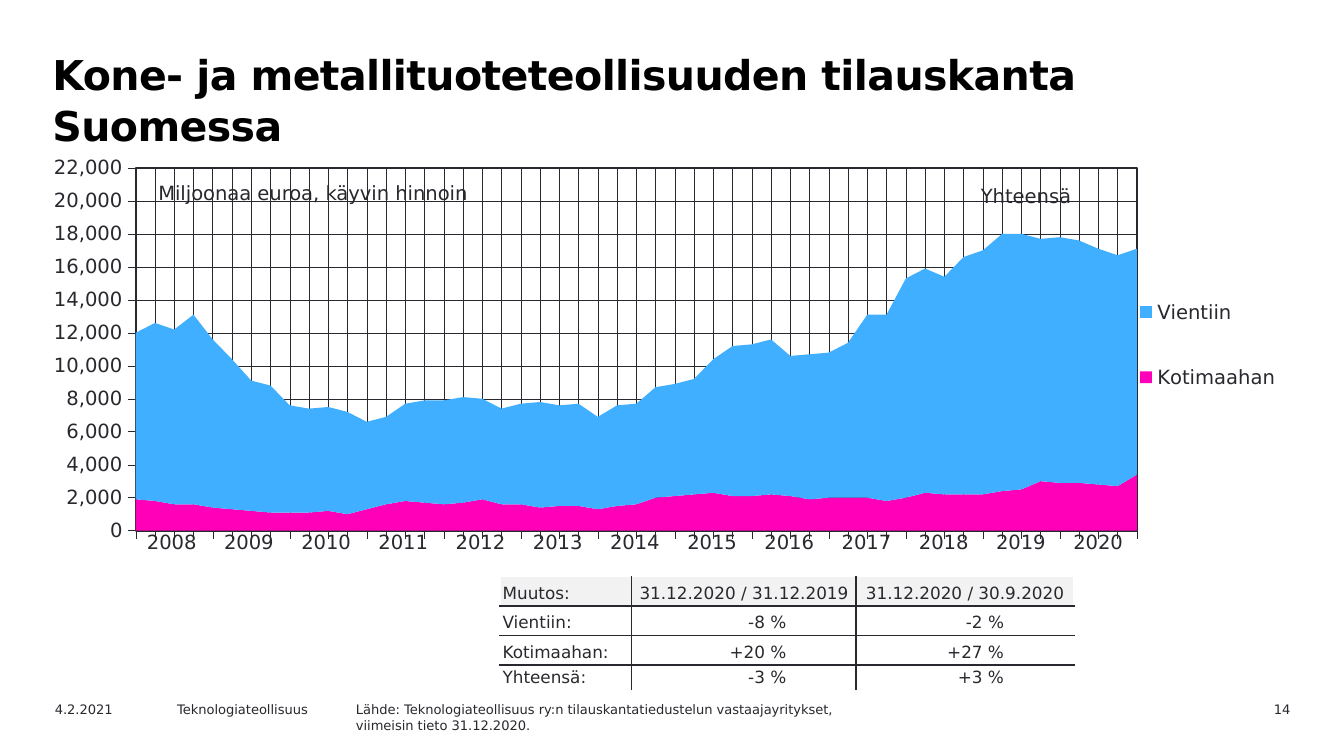
"""Build a slide showing the order book of the Finnish machine and metal products industry."""
import pptx
import pptx.chart.data
import pptx.dml.color
import pptx.enum.chart
import pptx.enum.dml
import pptx.enum.text
import pptx.oxml
import pptx.oxml.ns
import pptx.util

Inches, Pt = pptx.util.Inches, pptx.util.Pt
Align, Anchor = pptx.enum.text.PP_ALIGN, pptx.enum.text.MSO_ANCHOR
Enum = pptx.enum.chart
qn = pptx.oxml.ns.qn

THEME = dict(
    font="DejaVu Sans", ink="29282E", black="000000", white="FFFFFF", head="F2F2F2",
    title=22, label=10.5, cell=9, foot=7,
)
TITLE = "Kone- ja metallituoteteollisuuden tilauskanta Suomessa"
CHART = (0.3, 1.16, 9.4, 3.05)
PLOT = (0.71, 0.09, 7.45, 2.7)
LEGEND = (8.1, 0.76, 1.22, 1.29)
SERIES = [
    ("Kotimaahan ", "FF00B8", [
        1900, 1800, 1600, 1600, 1400, 1300, 1200, 1100, 1100, 1100, 1200, 1000, 1300, 1600,
        1800, 1700, 1600, 1700, 1900, 1600, 1600, 1400, 1500, 1500, 1300, 1500, 1600, 2000,
        2100, 2200, 2300, 2100, 2100, 2200, 2100, 1900, 2000, 2000, 2000, 1800, 2000, 2300,
        2200, 2200, 2200, 2400, 2500, 3000, 2900, 2900, 2800, 2700, 3400]),
    ("Vientiin ", "40AFFF", [
        10100, 10800, 10600, 11500, 10200, 9100, 7900, 7700, 6500, 6300, 6300, 6200, 5300, 5300,
        5900, 6200, 6300, 6400, 6100, 5800, 6100, 6400, 6100, 6200, 5600, 6100, 6100, 6700,
        6800, 7000, 8100, 9100, 9200, 9400, 8500, 8800, 8800, 9400, 11100, 11300, 13300, 13600,
        13200, 14400, 14800, 15600, 15500, 14700, 14900, 14700, 14300, 14000, 13700]),
]
YEARS = [str(year) for year in range(2008, 2021)]
CHANGE = [
    ["Muutos:", "31.12.2020 / 31.12.2019", "31.12.2020 / 30.9.2020"],
    ["Vientiin:", "-8 %", "-2 %"],
    ["Kotimaahan:", "+20 %", "+27 %"],
    ["Yhteensä:", "-3 %", "+3 %"],
]
FOOT = [
    ("14", (8.76, 5.17, 0.94, 0.18), Align.RIGHT),
    ("4.2.2021", (0.31, 5.17, 1, 0.18), Align.LEFT),
    ("Teknologiateollisuus", (1.22, 5.17, 1.42, 0.18), Align.LEFT),
    ("Lähde: Teknologiateollisuus ry:n tilauskantatiedustelun vastaajayritykset,\n"
     "viimeisin tieto 31.12.2020.", (2.55, 5.17, 5, 0.26), Align.LEFT),
]
NOTES = [
    ("Miljoonaa euroa, käyvin hinnoin", (1.08, 1.3, 2.6, 0.27), Align.LEFT),
    ("Yhteensä", (7.2, 1.32, 1.06, 0.27), Align.LEFT),
]


def shade(name):
    return pptx.dml.color.RGBColor.from_string(THEME.get(name, name))


def style(font, size, color="ink", bold=False):
    font.name, font.size, font.bold = THEME["font"], Pt(THEME[size]), bold
    font.color.rgb = shade(color)


def write(frame, text, size, align):
    frame.text = text
    for para in frame.paragraphs:
        para.alignment = align
        for run in para.runs:
            style(run.font, size)


def add_text(slide, text, box, align, size):
    frame = slide.shapes.add_textbox(*map(Inches, box)).text_frame
    frame.word_wrap = True
    write(frame, text, size, align)


def add_title(slide):
    shape = slide.shapes.title
    shape.left, shape.top, shape.width, shape.height = map(Inches, (0.29, 0.31, 8.74, 0.71))
    frame = shape.text_frame
    frame.text = TITLE
    frame.word_wrap, frame.vertical_anchor = True, Anchor.TOP
    frame.auto_size = pptx.enum.text.MSO_AUTO_SIZE.NONE
    para = frame.paragraphs[0]
    para.alignment, para.line_spacing = Align.LEFT, Pt(27)
    para.runs[0].font._element.set("spc", "-30")
    style(para.runs[0].font, "title", "black", True)


def draw_line(line, width, dash=False):
    line.color.rgb, line.width = shade("ink"), Pt(width)
    if dash:
        line.dash_style = pptx.enum.dml.MSO_LINE.ROUND_DOT


def place(parent, box, inner=False):
    for old in parent.findall(qn("c:layout")):
        parent.remove(old)
    target = '<c:layoutTarget val="inner"/>' if inner else ""
    x, y, wide, high = (part / CHART[2 + n % 2] for n, part in enumerate(box))
    layout = pptx.oxml.parse_xml(
        f'<c:layout {pptx.oxml.ns.nsdecls("c")}><c:manualLayout>{target}'
        '<c:xMode val="edge"/><c:yMode val="edge"/>'
        f'<c:x val="{x}"/><c:y val="{y}"/><c:w val="{wide}"/><c:h val="{high}"/>'
        '</c:manualLayout></c:layout>')
    parent.insert(0 if inner else 1, layout)


def add_chart(slide):
    data = pptx.chart.data.CategoryChartData(number_format="#,##0")
    data.categories = [str(n + 1) for n in range(len(SERIES[0][2]))]
    for name, _, vals in SERIES:
        data.add_series(name, vals)
    box = map(Inches, CHART)
    chart = slide.shapes.add_chart(Enum.XL_CHART_TYPE.AREA_STACKED, *box, data).chart
    style(chart.font, "label")
    chart.has_title = False
    chart.has_legend = True
    chart.legend.position = Enum.XL_LEGEND_POSITION.RIGHT
    chart.legend.include_in_layout = False
    style(chart.legend.font, "label")
    place(chart.legend._element, LEGEND)
    plot = chart.plots[0]
    plot.vary_by_categories = False
    for series, (_, color, _) in zip(plot.series, SERIES):
        series.format.fill.solid()
        series.format.fill.fore_color.rgb = shade(color)
        series.format.line.fill.background()
    for axis in (chart.category_axis, chart.value_axis):
        axis.has_major_gridlines = True
        axis.major_tick_mark = Enum.XL_TICK_MARK.OUTSIDE
        axis.minor_tick_mark = Enum.XL_TICK_MARK.NONE
        draw_line(axis.format.line, 0.22)
        draw_line(axis.major_gridlines.format.line, 0.25, True)
    chart.category_axis.tick_label_position = Enum.XL_TICK_LABEL_POSITION.NONE
    value = chart.value_axis
    value.minimum_scale, value.maximum_scale, value.major_unit = 0, 22000, 2000
    value.tick_labels.number_format = "#,##0"
    value.tick_labels.number_format_is_linked = False
    style(value.tick_labels.font, "label")
    value._element.find(qn("c:crossBetween")).set("val", "midCat")
    area = chart._chartSpace.chart.plotArea
    place(area, PLOT, True)
    area.append(pptx.oxml.parse_xml(
        f'<c:spPr {pptx.oxml.ns.nsdecls("c", "a")}><a:noFill/><a:ln w="12700"><a:solidFill>'
        f'<a:srgbClr val="{THEME["ink"]}"/></a:solidFill></a:ln></c:spPr>'))


def edge(cell, sides):
    props = cell._tc.get_or_add_tcPr()
    for side in "LRTB":
        color = sides.get(side)
        fill = (f'<a:solidFill><a:srgbClr val="{THEME[color]}"/></a:solidFill>'
                if color else "<a:noFill/>")
        props.append(pptx.oxml.parse_xml(
            f'<a:ln{side} {pptx.oxml.ns.nsdecls("a")} w="12700">{fill}</a:ln{side}>'))


def add_table(slide, rows, left, top, widths, heights):
    size = map(Inches, (left, top, sum(widths), sum(heights)))
    table = slide.shapes.add_table(len(rows), len(widths), *size).table
    table.first_row = table.horz_banding = False
    for col, wide in zip(table.columns, widths):
        col.width = Inches(wide)
    for row, high in zip(table.rows, heights):
        row.height = Inches(high)
    return table


def add_change(slide):
    table = add_table(slide, CHANGE, 3.72, 4.29, [0.98, 1.67, 1.62], [0.22, 0.22, 0.22, 0.18])
    last = len(CHANGE) - 1
    for i, row in enumerate(CHANGE):
        for j, text in enumerate(row):
            cell = table.cell(i, j)
            edge(cell, dict(L="ink" if j else "white", R="ink" if j < 2 else "white",
                            T="ink" if i else "white", B="ink" if i < last else "white"))
            cell.fill.solid()
            cell.fill.fore_color.rgb = shade("white" if i else "head")
            cell.vertical_anchor = Anchor.BOTTOM
            cell.margin_left = cell.margin_top = cell.margin_bottom = Inches(0.02)
            cell.margin_right = Inches(0.52 if i and j else 0.02)
            align = Align.LEFT if j == 0 else Align.RIGHT if i else Align.CENTER
            write(cell.text_frame, text, "cell", align)


def add_years(slide):
    table = add_table(slide, [YEARS], 0.99, 3.9, [7.47 / len(YEARS)] * len(YEARS), [0.31])
    for cell, year in zip(table.rows[0].cells, YEARS):
        edge(cell, {})
        cell.fill.background()
        write(cell.text_frame, year, "label", Align.CENTER)


def main():
    deck = pptx.Presentation()
    deck.slide_width = Inches(10)
    deck.slide_height = deck.slide_width * 9 // 16
    slide = deck.slides.add_slide(deck.slide_layouts[5])
    add_title(slide)
    for item in FOOT:
        add_text(slide, *item, "foot")
    add_chart(slide)
    for item in NOTES:
        add_text(slide, *item, "label")
    add_change(slide)
    add_years(slide)
    deck.save("out.pptx")


if __name__ == "__main__":
    main()
